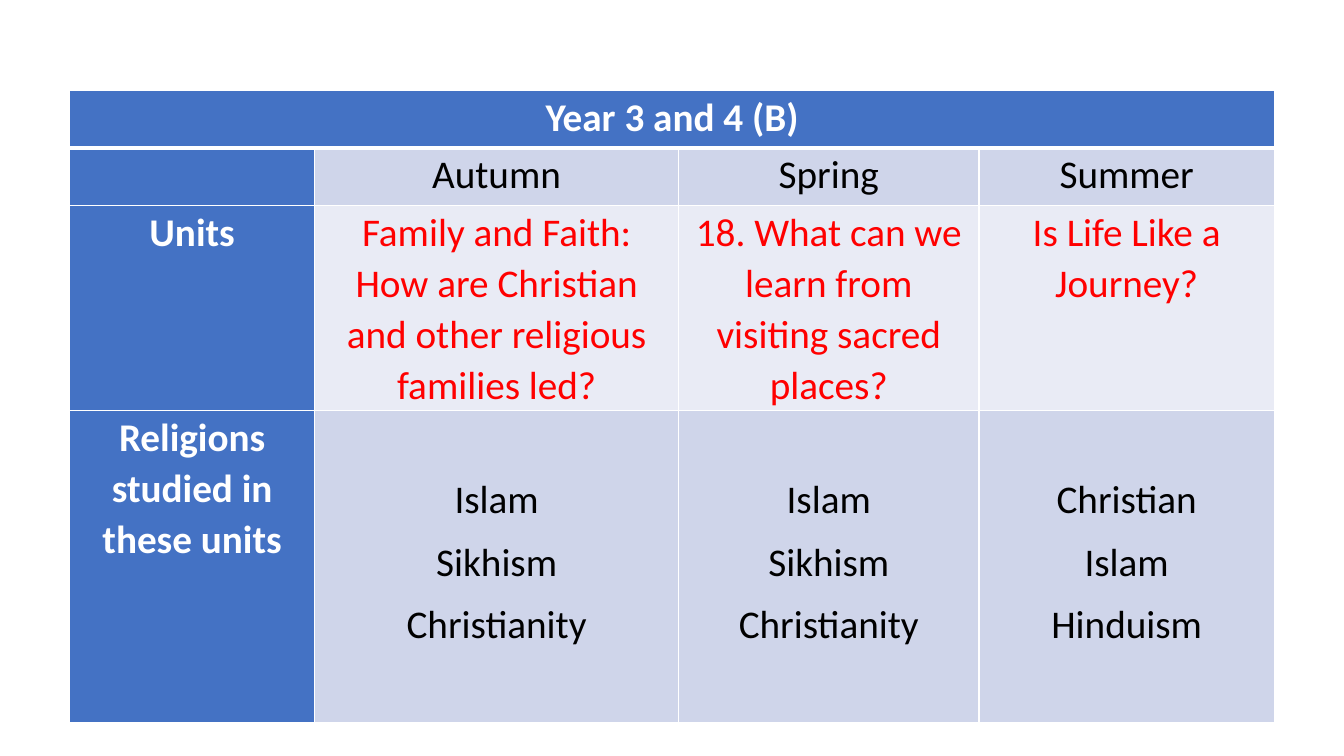
from dataclasses import dataclass

import lxml.etree
import pptx
import pptx.dml.color
import pptx.enum.text
import pptx.oxml.ns
import pptx.table
import pptx.util

RGBColor = pptx.dml.color.RGBColor
WHITE = RGBColor(0xFF, 0xFF, 0xFF)
BLACK = RGBColor(0x00, 0x00, 0x00)
RED = RGBColor(0xFF, 0x00, 0x00)
BLUE = RGBColor(0x44, 0x72, 0xC4)
BAND_DARK = RGBColor(0xCF, 0xD5, 0xEA)
BAND_LIGHT = RGBColor(0xE9, 0xEB, 0xF5)

SLIDE_WIDTH = pptx.util.Inches(13.33)
SLIDE_HEIGHT = pptx.util.Inches(7.5)

# Table grid, in percent of the slide's width and height
LEFT, TOP = 5.18, 12
COLUMNS = (18.23, 27.08, 22.35, 21.98)
ROWS = (7.6, 7.6, 27.07, 41.33)
RELIGIONS_INSET = 8.27


@dataclass(frozen=True)
class CellStyle:
    fill: RGBColor
    color: RGBColor
    bold: bool = False
    top_inset: float = 0


@dataclass(frozen=True)
class PlanRow:
    heading: str
    terms: tuple[str, ...]
    style: CellStyle


HEADING = CellStyle(BLUE, WHITE, bold=True)
PLAN = (
    PlanRow("", ("Autumn", "Spring", "Summer"), CellStyle(BAND_DARK, BLACK)),
    PlanRow(
        "Units",
        (
            "Family and Faith: How are Christian and other religious families led?",
            "18. What can we learn from visiting sacred places?",
            "Is Life Like a Journey?",
        ),
        CellStyle(BAND_LIGHT, RED),
    ),
    PlanRow(
        "Religions studied in these units",
        (
            "Islam\nSikhism\nChristianity",
            "Islam\nSikhism\nChristianity",
            "Christian\nIslam\nHinduism",
        ),
        CellStyle(BAND_DARK, BLACK, top_inset=RELIGIONS_INSET),
    ),
)


def across(percent: float) -> int:
    return round(SLIDE_WIDTH * percent / 100)


def down(percent: float) -> int:
    return round(SLIDE_HEIGHT * percent / 100)


def set_borders(cell: pptx.table._Cell, top: float, bottom: float) -> None:
    """Draw white lines around a cell; widths are in points."""
    properties = cell._tc.get_or_add_tcPr()
    sides = (("lnL", 1), ("lnR", 1), ("lnT", top), ("lnB", bottom))
    for position, (side, width) in enumerate(sides):
        line = lxml.etree.Element(
            pptx.oxml.ns.qn(f"a:{side}"), w=str(pptx.util.Pt(width))
        )
        fill = lxml.etree.SubElement(line, pptx.oxml.ns.qn("a:solidFill"))
        lxml.etree.SubElement(fill, pptx.oxml.ns.qn("a:srgbClr"), val=str(WHITE))
        properties.insert(position, line)


def write_cell(cell: pptx.table._Cell, text: str, style: CellStyle) -> None:
    cell.fill.solid()
    cell.fill.fore_color.rgb = style.fill
    cell.margin_left = cell.margin_right = pptx.util.Inches(0.07)
    cell.margin_top = down(style.top_inset)
    cell.margin_bottom = 0
    for index, words in enumerate(text.splitlines()):
        frame = cell.text_frame
        paragraph = frame.add_paragraph() if index else frame.paragraphs[0]
        paragraph.alignment = pptx.enum.text.PP_ALIGN.CENTER
        paragraph.line_spacing = 1.07
        paragraph.space_after = pptx.util.Pt(8)
        run = paragraph.add_run()
        run.text = words
        run.font.name = "Calibri"
        run.font.size = pptx.util.Pt(28)
        run.font.bold = style.bold
        run.font.color.rgb = style.color


def main() -> None:
    presentation = pptx.Presentation()
    presentation.slide_width = SLIDE_WIDTH
    presentation.slide_height = SLIDE_HEIGHT
    slide = presentation.slides.add_slide(presentation.slide_layouts[6])

    # Table grid
    plan_table = slide.shapes.add_table(
        len(ROWS), len(COLUMNS),
        across(LEFT), down(TOP), across(sum(COLUMNS)), down(sum(ROWS)),
    ).table
    for column, share in zip(plan_table.columns, COLUMNS):
        column.width = across(share)
    for row, share in zip(plan_table.rows, ROWS):
        row.height = down(share)

    # Year band across all columns
    year = plan_table.cell(0, 0)
    year.merge(plan_table.cell(0, len(COLUMNS) - 1))
    write_cell(year, "Year 3 and 4 (B)", HEADING)

    # Terms, units and religions
    for row_index, plan_row in enumerate(PLAN, start=1):
        write_cell(plan_table.cell(row_index, 0), plan_row.heading, HEADING)
        for column_index, term in enumerate(plan_row.terms, start=1):
            write_cell(plan_table.cell(row_index, column_index), term, plan_row.style)

    # White lines, heavier below the year band
    for row_index, row in enumerate(plan_table.rows):
        for cell in row.cells:
            set_borders(
                cell,
                top=3 if row_index == 1 else 1,
                bottom=3 if row_index == 0 else 1,
            )

    presentation.save("out.pptx")


if __name__ == "__main__":
    main()
